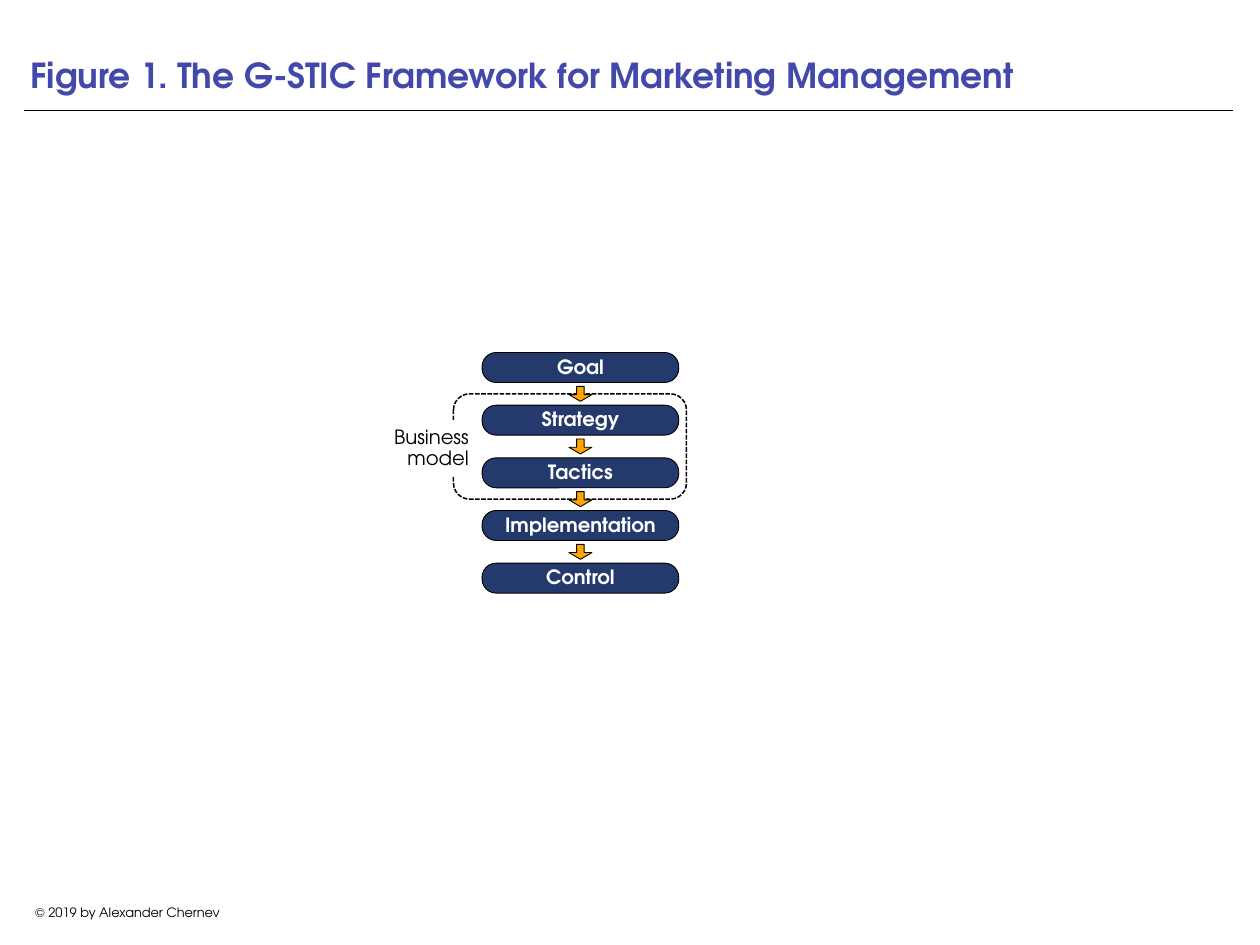
from collections import namedtuple

from lxml import etree
from pptx import Presentation
from pptx.dml.color import RGBColor
from pptx.enum.dml import MSO_LINE_DASH_STYLE as Dash
from pptx.enum.shapes import MSO_CONNECTOR_TYPE as Connector, MSO_SHAPE as Shape
from pptx.enum.text import MSO_ANCHOR as Anchor, MSO_AUTO_SIZE as AutoSize, PP_ALIGN as Align
from pptx.oxml.ns import qn
from pptx.util import Cm, Pt

FONT = "TeX Gyre Adventor"
TITLE_BLUE = RGBColor(0x43, 0x49, 0xAA)
NAVY = RGBColor(0x25, 0x3A, 0x6C)
ORANGE = RGBColor(0xFF, 0xA4, 0x00)
BLACK = RGBColor(0, 0, 0)
WHITE = RGBColor(0xFF, 0xFF, 0xFF)

STEPS = ["Goal", "Strategy", "Tactics", "Implementation", "Control"]
MODEL_STEPS = (1, 2)

Box = namedtuple("Box", "left top width height")


def write(shape, text, size, color, align, anchor, bold=False, margin=Cm(0), spacing=None):
    frame = shape.text_frame
    frame.auto_size = AutoSize.NONE
    frame.word_wrap = True
    frame.vertical_anchor = anchor
    frame.margin_left = frame.margin_right = margin
    frame.margin_top = frame.margin_bottom = margin
    para = frame.paragraphs[0]
    para.alignment = align
    para.line_spacing = spacing
    span = para.add_run()
    span.text = text
    span.font.name = FONT
    span.font.size = Pt(size)
    span.font.bold = bold
    span.font.color.rgb = color


def add_figure(page, kind, box, fill=None, line_width=None, adjustments=()):
    """Add a preset shape; without a fill or line width that part is left clear."""
    shape = page.shapes.add_shape(kind, *box)
    shape.shadow.inherit = False
    if fill is None:
        shape.fill.background()
    else:
        shape.fill.solid()
        shape.fill.fore_color.rgb = fill
    if line_width is None:
        shape.line.fill.background()
    else:
        shape.line.color.rgb = BLACK
        shape.line.width = Pt(line_width)
    for index, value in enumerate(adjustments):
        shape.adjustments[index] = value
    return shape


def add_heading(page, box):
    title = page.shapes.title
    title.left, title.top, title.width, title.height = box
    write(title, "Figure 1. The G-STIC Framework for Marketing Management", 28,
          TITLE_BLUE, Align.LEFT, Anchor.BOTTOM, bold=True, margin=Cm(0.18))
    rule_top = box.top + box.height + Cm(0.23)
    rule = page.shapes.add_connector(Connector.STRAIGHT, box.left, rule_top,
                                     box.left + box.width, rule_top)
    rule.line.color.rgb = BLACK
    rule.line.width = Pt(0.5)
    etree.SubElement(rule._element.spPr, qn("a:effectLst"))


def add_flow(page, box):
    """Stack the steps in the box, with arrows between and the business model framed."""
    pill_height = Cm(0.86)
    pitch = (box.height - pill_height) // (len(STEPS) - 1)
    gap = pitch - pill_height

    def gap_middle(index):
        """Height of the middle of the gap above the step."""
        return box.top + index * pitch - gap // 2

    first, last = MODEL_STEPS
    frame_top, frame_bottom = gap_middle(first), gap_middle(last + 1)
    frame = add_figure(page, Shape.ROUNDED_RECTANGLE,
                       Box(box.left - Cm(0.82), frame_top, box.width + Cm(1.04),
                           frame_bottom - frame_top),
                       line_width=1.25, adjustments=[0.153])
    frame.line.dash_style = Dash.SQUARE_DOT

    for index, step in enumerate(STEPS):
        pill = add_figure(page, Shape.ROUNDED_RECTANGLE,
                          Box(box.left, box.top + index * pitch, box.width, pill_height),
                          NAVY, 0.75, [0.47])
        write(pill, step, 16, WHITE, Align.CENTER, Anchor.BOTTOM, bold=True, spacing=0.9)

    label_width, label_height = Cm(2.5), Cm(1.6)
    label = add_figure(page, Shape.RECTANGLE,
                       Box(box.left - Cm(0.38) - label_width,
                           (frame_top + frame_bottom - label_height) // 2 + Cm(0.06),
                           label_width, label_height), WHITE)
    write(label, "Business model", 16, BLACK, Align.RIGHT, Anchor.MIDDLE, spacing=0.9)

    arrow_width, arrow_height = Cm(0.66), Cm(0.43)
    for index in range(1, len(STEPS)):
        add_figure(page, Shape.DOWN_ARROW,
                   Box(box.left + (box.width - arrow_width) // 2,
                       gap_middle(index) - arrow_height // 2, arrow_width, arrow_height),
                   ORANGE, 0.75, [0.33, 0.45])


def add_copyright(page, box):
    note = page.shapes.add_textbox(*box)
    write(note, "© 2019 by Alexander Chernev", 10.5, BLACK, Align.CENTER, Anchor.TOP,
          margin=Cm(0.13))
    note.text_frame.word_wrap = False


def main():
    deck = Presentation()
    deck.slide_width, deck.slide_height = Cm(36.12), Cm(27.1)
    page = deck.slides.add_slide(deck.slide_layouts[5])
    add_heading(page, Box(Cm(0.69), Cm(0), Cm(34.65), Cm(2.92)))
    add_flow(page, Box(Cm(13.82), Cm(10.11), Cm(5.64), Cm(6.9)))
    add_copyright(page, Box(Cm(0.69), Cm(25.8), Cm(5.94), Cm(0.71)))
    deck.save("out.pptx")


if __name__ == "__main__":
    main()
